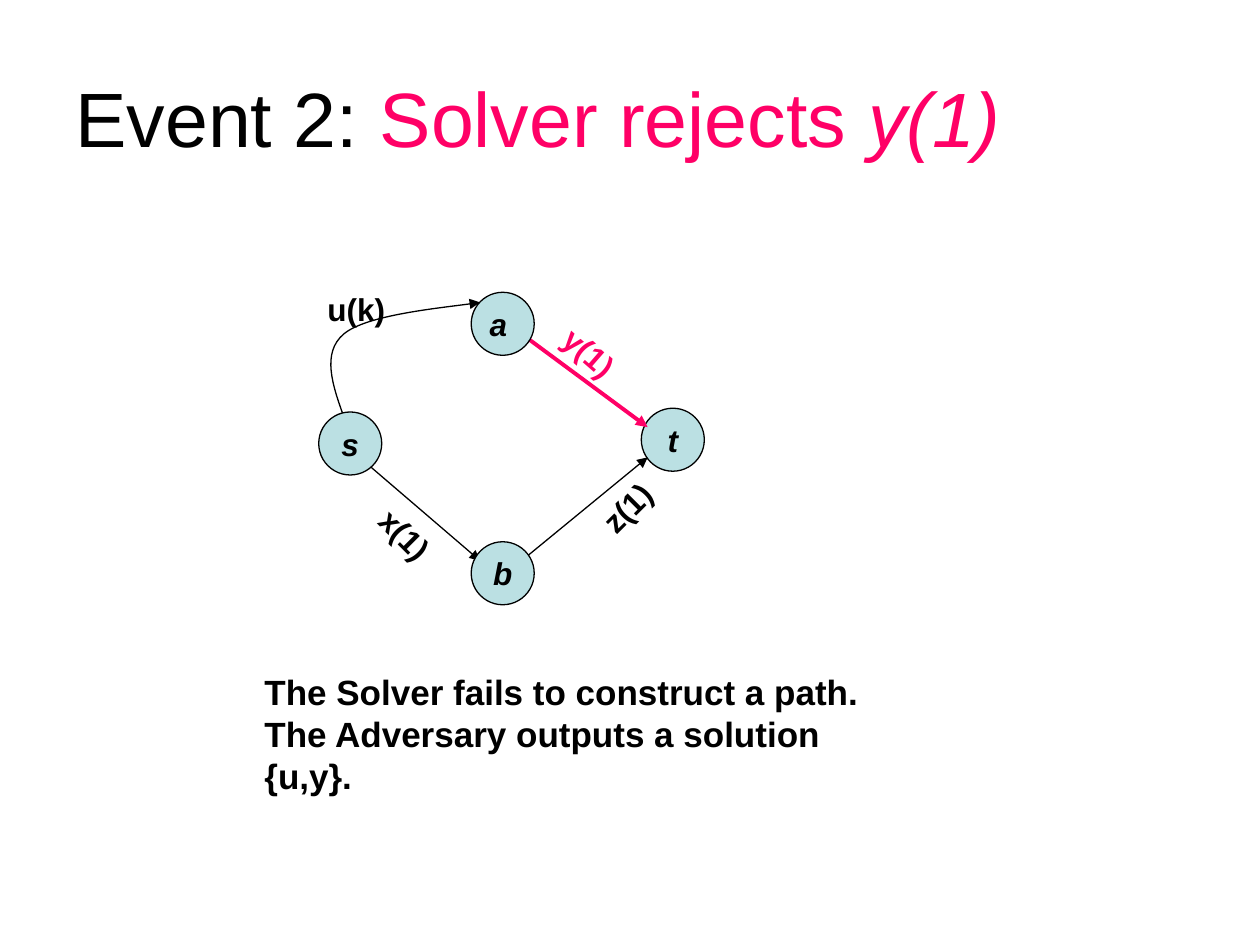
import pptx
import pptx.util
import pptx.dml.color
import pptx.enum.shapes
import pptx.enum.text
import pptx.oxml
import pptx.oxml.ns

# Grid of 100 columns by 75 rows, square cells
CELL = 0.1
INK, PINK, BLUE = "000000", "FF0066", "BBE0E3"
NODE = 5

# Name: left column, top row
NODES = {"t": (50.9, 32.4), "b": (37.4, 43), "a ": (37.4, 23.2), "s": (25.3, 32.7)}

# Start, end, colour, line width
EDGES = [
    ((29, 36.7), (38.1, 44.5), INK, 0.75),
    ((41.4, 26.5), (51.4, 33.9), PINK, 2.25),
    ((41.4, 44.5), (51.4, 36.3), INK, 0.75),
]

# Start point, then three points per Bezier piece
CURVE = [(27.3, 33.1), (26.4, 30.6), (25.5, 28), (27.3, 26.5),
         (29.1, 25), (36.3, 24.3), (38.1, 24)]

# Text, box, turn, colour, wrap
LABELS = [
    ("u(k)", (25, 22.5, 6.6, 4), 0, INK, False),
    ("x(1)", (28.7, 41, 8.1, 4), 45, INK, True),
    ("y(1)", (43.3, 26.7, 8.7, 4), 41, PINK, True),
    ("z(1)", (46.6, 38.3, 6.3, 4), 315, INK, False),
]


def grid(*cells):
    return [pptx.util.Inches(n * CELL) for n in cells]


def color(code):
    return pptx.dml.color.RGBColor.from_string(code)


def style(font, size, code, bold=False, slant=False):
    font.name, font.size = "Arial", pptx.util.Pt(size)
    font.bold, font.italic = bold, slant
    font.color.rgb = color(code)


def stroke(line, code, width, arrow=False):
    line.color.rgb = color(code)
    line.width = pptx.util.Pt(width)
    if arrow:
        ln = line._get_or_add_ln()
        tail = pptx.oxml.parse_xml(
            f'<a:tailEnd {pptx.oxml.ns.nsdecls("a")} type="triangle"/>')
        ln.append(tail)


def add_title(slide, parts):
    title = slide.shapes.title
    title.left, title.top, title.width, title.height = grid(5, 3, 90, 12.5)
    frame = title.text_frame
    frame.auto_size = pptx.enum.text.MSO_AUTO_SIZE.NONE
    frame.vertical_anchor = pptx.enum.text.MSO_ANCHOR.MIDDLE
    para = frame.paragraphs[0]
    para.alignment = pptx.enum.text.PP_ALIGN.LEFT
    for text, code, slant in parts:
        run = para.add_run()
        run.text = text
        style(run.font, 44, code, slant=slant)


def add_text(slide, text, box, size, code=INK, turn=0, wrap=False):
    shape = slide.shapes.add_textbox(*grid(*box))
    shape.rotation = turn
    frame = shape.text_frame
    frame.word_wrap = wrap
    frame.auto_size = pptx.enum.text.MSO_AUTO_SIZE.SHAPE_TO_FIT_TEXT
    frame.text = text
    for para in frame.paragraphs:
        style(para.font, size, code, bold=True)


def add_node(slide, name):
    oval = slide.shapes.add_shape(
        pptx.enum.shapes.MSO_SHAPE.OVAL, *grid(*NODES[name], NODE, NODE))
    oval.shadow.inherit = False
    oval.fill.solid()
    oval.fill.fore_color.rgb = color(BLUE)
    stroke(oval.line, INK, 0.75)
    frame = oval.text_frame
    frame.word_wrap = False
    frame.vertical_anchor = pptx.enum.text.MSO_ANCHOR.MIDDLE
    frame.text = name
    para = frame.paragraphs[0]
    para.alignment = pptx.enum.text.PP_ALIGN.CENTER
    style(para.font, 18, INK, bold=True, slant=True)


def add_edge(slide, start, end, code, width):
    edge = slide.shapes.add_connector(
        pptx.enum.shapes.MSO_CONNECTOR.STRAIGHT, *grid(*start, *end))
    stroke(edge.line, code, width, arrow=True)
    edge._element.spPr.append(
        pptx.oxml.parse_xml(f'<a:effectLst {pptx.oxml.ns.nsdecls("a")}/>'))


def add_curve(slide, points):
    first, *rest = [grid(*point) for point in points]
    pen = slide.shapes.build_freeform(*first)
    pen.add_line_segments(rest, close=False)
    curve = pen.convert_to_shape()
    curve.shadow.inherit = False
    curve.fill.background()
    stroke(curve.line, INK, 0.75, arrow=True)
    # Turn each three line steps into one Bezier piece
    steps = list(curve._element.iter(pptx.oxml.ns.qn("a:lnTo")))
    for i in range(0, len(steps), 3):
        bend = pptx.oxml.parse_xml(
            f'<a:cubicBezTo {pptx.oxml.ns.nsdecls("a")}/>')
        steps[i].addprevious(bend)
        for step in steps[i:i + 3]:
            bend.append(step[0])
            step.getparent().remove(step)


def main():
    deck = pptx.Presentation()
    deck.slide_width, deck.slide_height = grid(100, 75)
    slide = deck.slides.add_slide(deck.slide_layouts[5])

    # Title and verdict
    add_title(slide, [("Event 2: ", INK, False),
                      ("Solver rejects ", PINK, False), ("y(1)", PINK, True)])
    add_text(slide, "The Solver fails to construct a path.\n"
             "The Adversary outputs a solution {u,y}.", (20, 52.7, 53.8, 7.7), 20)

    # Graph: the sink lies under its arrows, the other nodes over them
    sink, *others = NODES
    add_node(slide, sink)
    for edge in EDGES:
        add_edge(slide, *edge)
    add_curve(slide, CURVE)
    for text, box, turn, code, wrap in LABELS:
        add_text(slide, text, box, 18, code, turn, wrap)
    for name in others:
        add_node(slide, name)

    deck.save("out.pptx")


if __name__ == "__main__":
    main()
